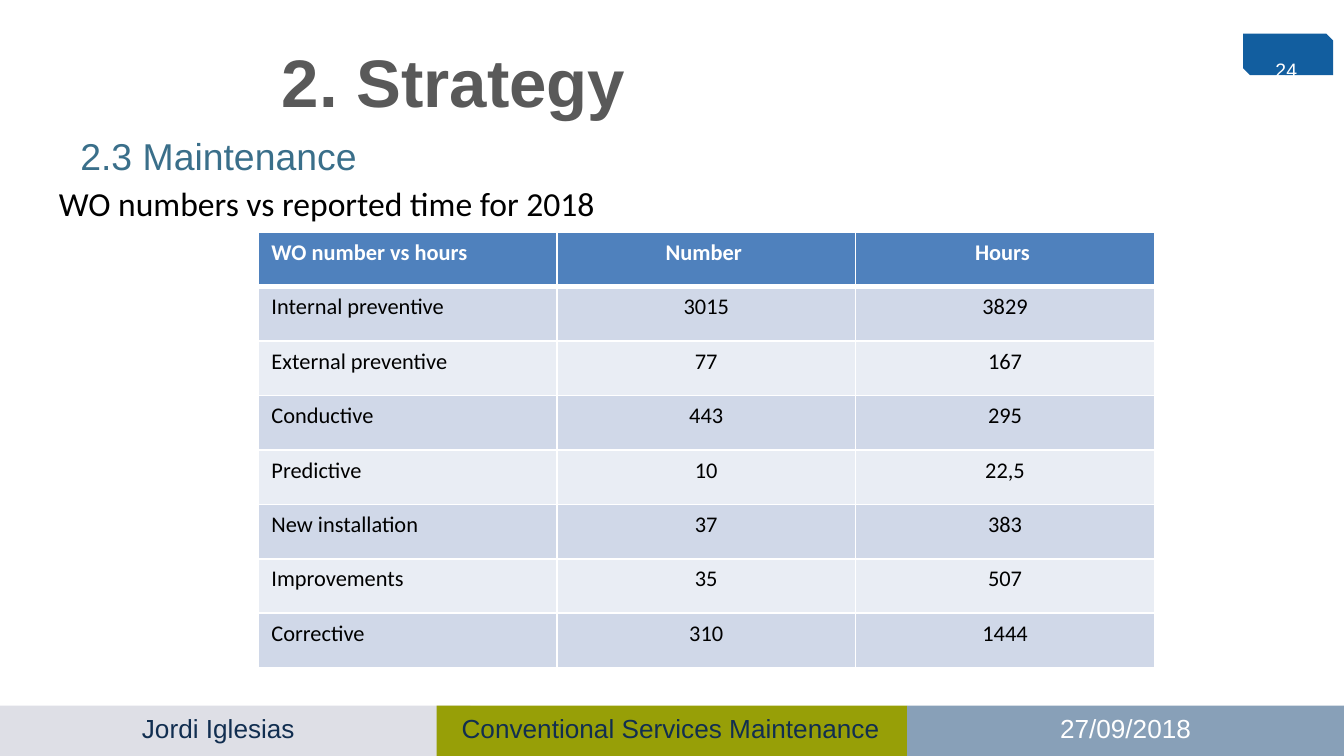
from lxml import etree
from pptx import Presentation
from pptx.dml.color import RGBColor
from pptx.enum.shapes import MSO_SHAPE
from pptx.enum.text import PP_ALIGN
from pptx.oxml.ns import qn
from pptx.util import Inches, Pt

LEFT, CENTER, RIGHT = PP_ALIGN.LEFT, PP_ALIGN.CENTER, PP_ALIGN.RIGHT
RECTANGLE, SNIPPED = MSO_SHAPE.RECTANGLE, MSO_SHAPE.SNIP_2_DIAG_RECTANGLE

COLORS = {
    "badge": "125E9F",
    "author_band": "DEDFE6",
    "topic_band": "979F07",
    "date_band": "88A0B8",
    "navy": "112E50",
    "title": "595959",
    "subtitle": "3A6F8A",
    "header": "4F81BD",
    "odd_row": "D0D8E8",
    "even_row": "E9EDF4",
    "white": "FFFFFF",
    "black": "000000",
}

WORK_ORDERS = [
    ("WO number vs hours", "Number ", "Hours "),
    ("Internal preventive", "3015", "3829"),
    ("External preventive", "77", "167"),
    ("Conductive", "443", "295"),
    ("Predictive", "10", "22,5"),
    ("New installation", "37", "383"),
    ("Improvements", "35", "507"),
    ("Corrective", "310", "1444"),
]

FOOTER = [
    ("Jordi Iglesias", 0, 3.5, 3.25, "author_band", "navy"),
    ("Conventional Services Maintenance", 3.25, 3.5, 3.48, "topic_band", "navy"),
    ("27/09/2018", 6.75, 3.25, 3.25, "date_band", "white"),
]


class SlideBuilder:
    heading_font = "Arial"
    body_font = "Calibri"

    def __init__(self, slide):
        self.slide = slide

    def color(self, name):
        return RGBColor.from_string(COLORS[name])

    def style(self, paragraph, size, color, font, bold=False, align=LEFT):
        paragraph.alignment = align
        paragraph.font.size = Pt(size)
        paragraph.font.name = font
        paragraph.font.bold = bold
        paragraph.font.color.rgb = self.color(color)

    def block(self, box, fill, geometry=RECTANGLE):
        block = self.slide.shapes.add_shape(geometry, *map(Inches, box))
        block.shadow.inherit = False
        block.fill.solid()
        block.fill.fore_color.rgb = self.color(fill)
        block.line.fill.background()

    def text(self, words, box, size, color, font=heading_font, **options):
        frame = self.slide.shapes.add_textbox(*map(Inches, box)).text_frame
        frame.word_wrap = True
        paragraph = frame.paragraphs[0]
        paragraph.text = words
        self.style(paragraph, size, color, font, **options)

    def border(self, cell, side, width):
        line = etree.SubElement(cell._tc.get_or_add_tcPr(), qn(f"a:ln{side}"), w=str(Pt(width)))
        fill = etree.SubElement(line, qn("a:solidFill"))
        etree.SubElement(fill, qn("a:srgbClr"), val=COLORS["white"])

    def table(self, rows, box):
        table = self.slide.shapes.add_table(len(rows), len(rows[0]), *map(Inches, box)).table
        for r, row in enumerate(rows):
            is_header = r == 0
            fill = "header" if is_header else ("even_row", "odd_row")[r % 2]
            for c, words in enumerate(row):
                cell = table.cell(r, c)
                for side in "LRTB":
                    under_header = (r, side) in ((0, "B"), (1, "T"))
                    self.border(cell, side, 3 if under_header else 1)
                cell.fill.solid()
                cell.fill.fore_color.rgb = self.color(fill)
                paragraph = cell.text_frame.paragraphs[0]
                paragraph.text = words
                self.style(paragraph, 12, "white" if is_header else "black", self.body_font,
                           bold=is_header, align=CENTER if c else LEFT)


def main():
    deck = Presentation()
    deck.slide_width = Inches(10)
    deck.slide_height = deck.slide_width * 9 // 16
    builder = SlideBuilder(deck.slides.add_slide(deck.slide_layouts[6]))

    builder.block((9.25, 0.25, 0.67, 0.31), "badge", SNIPPED)
    for words, left, band_width, text_width, fill, color in FOOTER:
        builder.block((left, 5.25, band_width, 0.38), fill)
        builder.text(words, (left, 5.25, text_width, 0.34), 14, color, align=CENTER)

    builder.text("2. Strategy", (2, 0.25, 7.17, 0.71), 36, "title", bold=True)
    builder.text("2.3 Maintenance", (0.5, 0.94, 9, 0.37), 20, "subtitle")
    builder.text("24", (9.08, 0.38, 0.67, 0.25), 10.4, "white", align=RIGHT)
    builder.table(WORK_ORDERS, (1.92, 1.73, 6.67, 3.24))
    builder.text("WO numbers vs reported time for 2018", (0.34, 1.31, 5.33, 0.4), 18,
                 "black", builder.body_font)
    deck.save("out.pptx")


if __name__ == "__main__":
    main()
